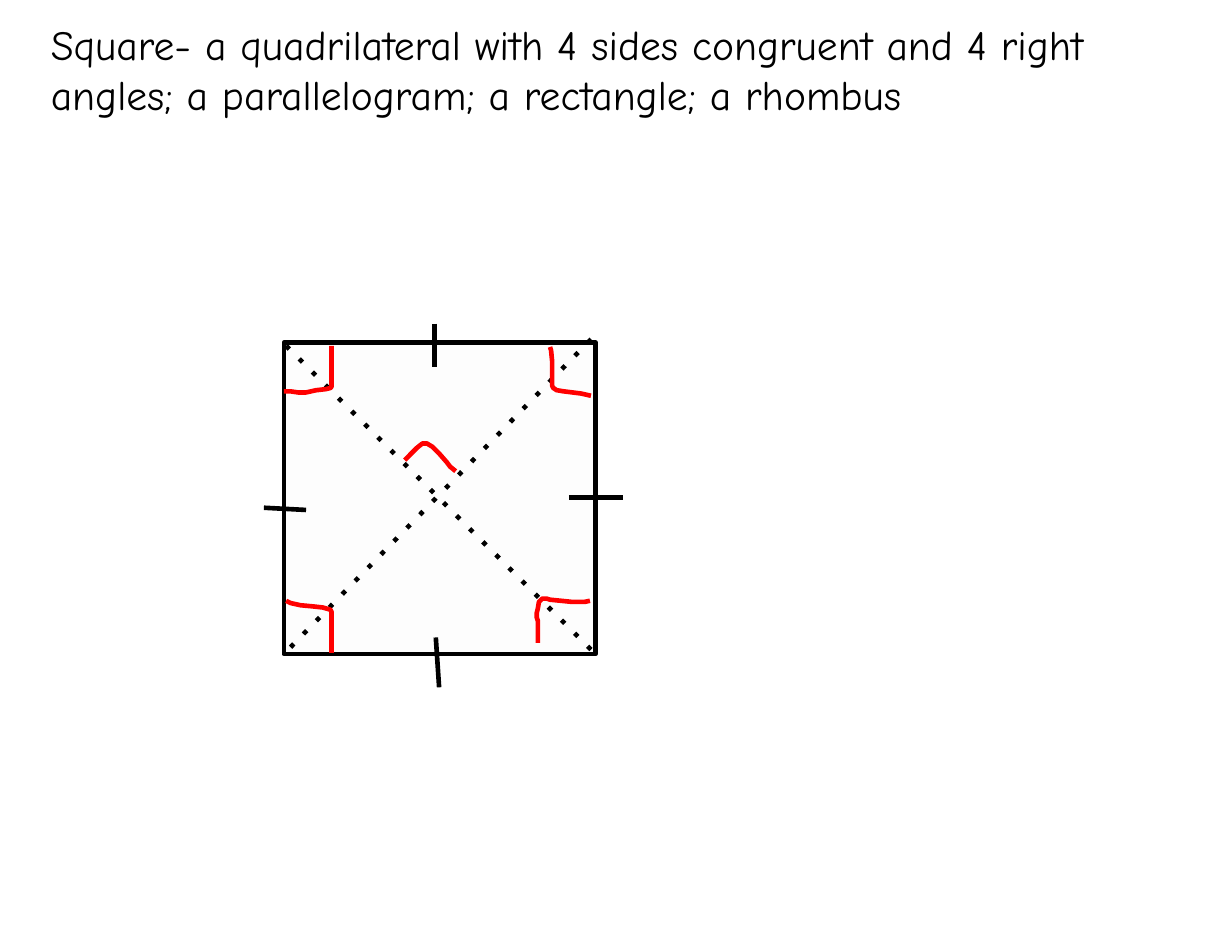
from dataclasses import dataclass

from pptx import Presentation
from pptx.dml.color import RGBColor
from pptx.enum.dml import MSO_LINE
from pptx.enum.shapes import MSO_CONNECTOR, MSO_SHAPE
from pptx.oxml.ns import qn
from pptx.util import Inches, Pt


@dataclass(frozen=True)
class Theme:
    font: str = "Comic Neue"
    text_size: Pt = Pt(27)
    stroke: Pt = Pt(3)
    ink: RGBColor = RGBColor(0, 0, 0)
    angle: RGBColor = RGBColor(255, 0, 0)
    inside: RGBColor = RGBColor(0xFD, 0xFD, 0xFD)


theme = Theme()


def style_line(shape, color):
    shape.line.color.rgb = color
    shape.line.width = theme.stroke


prs = Presentation()
prs.slide_width, prs.slide_height = Inches(11.11), Inches(8.47)
slide = prs.slides.add_slide(prs.slide_layouts[6])
shapes = slide.shapes

# Definition
definition = shapes.add_textbox(Inches(0.36), Inches(0.12), Inches(10.6), Inches(1.01))
definition.text_frame.word_wrap = True
wording = definition.text_frame.paragraphs[0].add_run()
wording.text = (
    "Square- a quadrilateral with 4 sides congruent and 4 right angles; "
    "a parallelogram; a rectangle; a rhombus"
)
wording.font.name = theme.font
wording.font.size = theme.text_size
wording.font.color.rgb = theme.ink

# Square
side = Inches(2.81)
square = shapes.add_shape(MSO_SHAPE.RECTANGLE, Inches(2.56), Inches(3.09), side, side)
square.shadow.inherit = False
square.fill.solid()
square.fill.fore_color.rgb = theme.inside
style_line(square, theme.ink)

# Dotted diagonals and the ticks that mark congruent sides
diagonals = [(2.58, 3.12, 5.36, 5.89), (5.33, 3.06, 2.56, 5.9)]
ticks = [
    (2.38, 4.58, 2.76, 4.6),
    (3.92, 2.92, 3.92, 3.31),
    (5.13, 4.49, 5.62, 4.49),
    (3.93, 5.75, 3.96, 6.2),
]
for ends, dash in [(d, MSO_LINE.ROUND_DOT) for d in diagonals] + [(t, None) for t in ticks]:
    segment = shapes.add_connector(MSO_CONNECTOR.STRAIGHT, *map(Inches, ends))
    style_line(segment, theme.ink)
    if dash:
        # ROUND_DOT is written as sysDot, so the plain dot pattern is set below
        segment.line.dash_style = dash
        segment.line._ln.find(qn("a:prstDash")).set("val", "dot")
    properties = segment._element.spPr
    properties.append(properties.makeelement(qn("a:effectLst"), {}))

# Hand-drawn right-angle marks
angle_marks = {
    "top left": [
        (2.99, 3.12), (2.99, 3.49), (2.98, 3.5), (2.94, 3.51), (2.85, 3.52),
        (2.76, 3.54), (2.69, 3.54), (2.62, 3.53), (2.56, 3.53),
    ],
    "centre": [
        (3.65, 4.15), (3.76, 4.04), (3.81, 4), (3.85, 4), (3.9, 4.03),
        (3.96, 4.09), (4.03, 4.17), (4.06, 4.21), (4.11, 4.25),
    ],
    "top right": [
        (4.96, 3.13), (4.97, 3.16), (4.98, 3.26), (4.98, 3.48), (4.99, 3.5),
        (5.02, 3.52), (5.08, 3.53), (5.16, 3.54), (5.24, 3.55), (5.33, 3.57),
    ],
    "bottom right": [
        (5.32, 5.42), (5.27, 5.43), (5.16, 5.43), (5.06, 5.42), (4.96, 5.41),
        (4.93, 5.4), (4.89, 5.4), (4.86, 5.43), (4.85, 5.49), (4.84, 5.53),
        (4.84, 5.57), (4.85, 5.6), (4.85, 5.8),
    ],
    "bottom left": [
        (2.58, 5.42), (2.62, 5.44), (2.71, 5.46), (2.82, 5.47), (2.91, 5.48),
        (2.98, 5.5), (2.99, 5.52), (2.99, 5.89),
    ],
}
for points in angle_marks.values():
    start, *rest = [(Inches(x), Inches(y)) for x, y in points]
    outline = shapes.build_freeform(*start)
    outline.add_line_segments(rest, close=False)
    mark = outline.convert_to_shape()
    mark.shadow.inherit = False
    mark.fill.background()
    style_line(mark, theme.angle)

prs.save("out.pptx")
